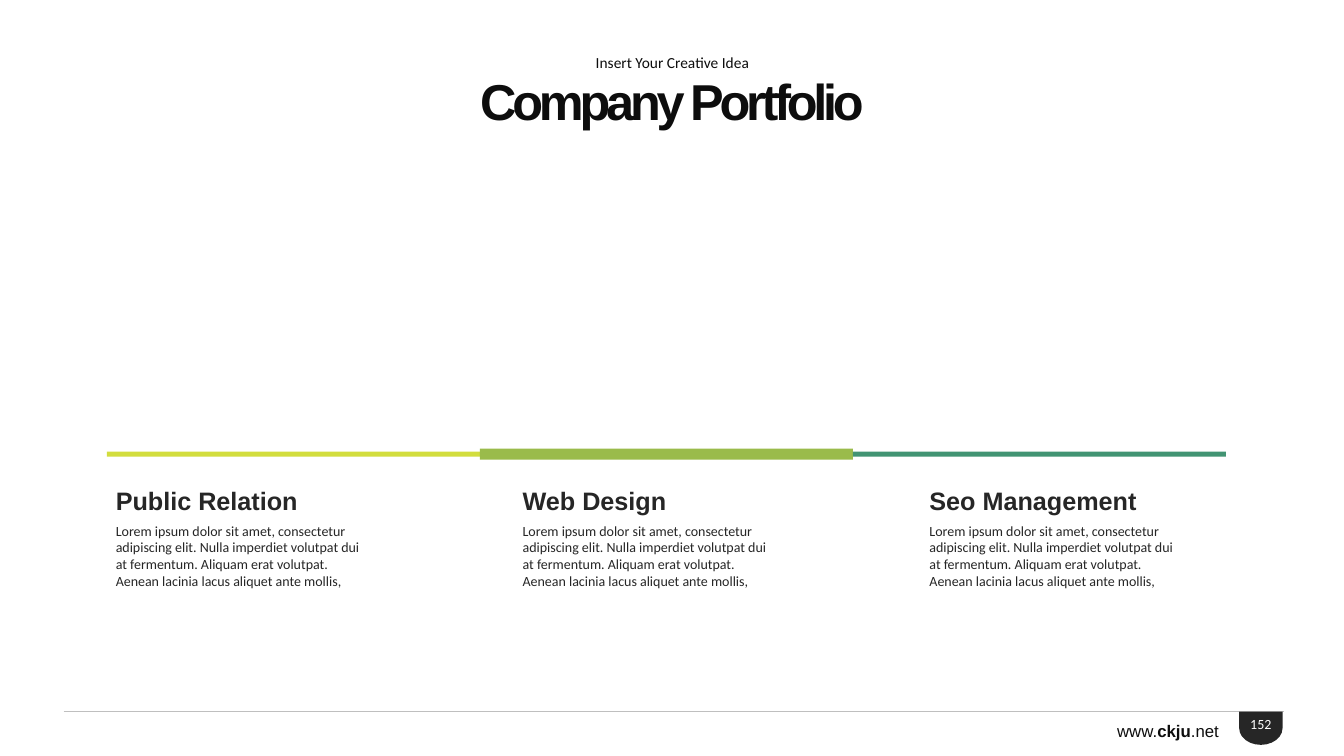
from lxml.etree import SubElement
from pptx import Presentation
from pptx.dml.color import RGBColor
from pptx.enum.shapes import MSO_CONNECTOR, MSO_SHAPE
from pptx.enum.text import MSO_ANCHOR, PP_ALIGN
from pptx.oxml.ns import qn
from pptx.util import Inches, Pt

COLORS = {
    "ink": "0D0D0D", "dark": "262626", "rule": "BFBFBF", "white": "FFFFFF",
    "lime": "D2DD3E", "green": "9ABB4B", "teal": "429473",
}
TITLE = "Company Portfolio"
SUBTITLE = "Insert Your Creative Idea"
BLURB = ("Lorem ipsum dolor sit amet, consectetur adipiscing elit. Nulla imperdiet "
         "volutpat dui at fermentum. Aliquam erat volutpat. Aenean lacinia lacus "
         "aliquet ante mollis,")
# heading, bar colour, bar thickness
SERVICES = [
    ("Public Relation", "lime", 0.05),
    ("Web Design", "green", 0.11),
    ("Seo Management", "teal", 0.05),
]
WEBSITE = [("www.", False), ("ckju", True), (".net", False)]
PAGE_NUMBER = "152"

TEXT_LEFT, TEXT_STEP = 1.05, 4.035
BAR_LEFT, BAR_WIDTH, BAR_MIDDLE = 1.06, 3.7, 4.505


def rgb(color):
    return RGBColor.from_string(COLORS[color])


def format_text(shape, size, font, color, bold=False, align=PP_ALIGN.LEFT,
                anchor=MSO_ANCHOR.MIDDLE, spacing=0.9):
    frame = shape.text_frame
    frame.word_wrap = True
    frame.vertical_anchor = anchor
    paragraph = frame.paragraphs[0]
    paragraph.alignment = align
    paragraph.line_spacing = spacing
    paragraph.font.size = Pt(size)
    paragraph.font.name = font
    paragraph.font.bold = bold
    paragraph.font.color.rgb = rgb(color)


def add_text(slide, box, text, *style, **options):
    textbox = slide.shapes.add_textbox(*map(Inches, box))
    textbox.text_frame.text = text
    format_text(textbox, *style, **options)
    return textbox


def add_filled(slide, preset, box, color):
    shape = slide.shapes.add_shape(preset, *map(Inches, box))
    shape.shadow.inherit = False
    shape.fill.solid()
    shape.fill.fore_color.rgb = rgb(color)
    shape.line.fill.background()
    return shape


def add_header(slide):
    title = slide.shapes.title
    title.left, title.top, title.width, title.height = map(
        Inches, (1.48, 0.73, 10.37, 0.61))
    title.text_frame.text = TITLE
    format_text(title, 36, "Arial", "ink", bold=True, align=PP_ALIGN.CENTER)
    # Letter spacing in hundredths of a point
    title.text_frame.paragraphs[0].runs[0].font._element.set("spc", "-300")
    add_text(slide, (4.79, 0.52, 3.76, 0.21), SUBTITLE, 11, "Calibri", "ink",
             align=PP_ALIGN.CENTER)


def add_services(slide):
    for column, (heading, color, thickness) in enumerate(SERVICES):
        left = TEXT_LEFT + column * TEXT_STEP
        add_text(slide, (left, 4.82, 3.16, 0.33), heading, 18, "Arial", "dark",
                 bold=True)
        add_text(slide, (left, 5.13, 2.71, 0.77), BLURB, 10, "Calibri", "dark",
                 anchor=MSO_ANCHOR.TOP, spacing=1.0)
        add_filled(slide, MSO_SHAPE.RECTANGLE,
                   (BAR_LEFT + column * BAR_WIDTH, BAR_MIDDLE - thickness / 2,
                    BAR_WIDTH, thickness), color)


def add_footer(slide):
    website = add_text(slide, (10.95, 7.07, 1.27, 0.38), "", 12, "Arial", "ink",
                       align=PP_ALIGN.CENTER)
    website.text_frame.word_wrap = False
    for part, bold in WEBSITE:
        run = website.text_frame.paragraphs[0].add_run()
        run.text = part
        run.font.bold = bold

    rule = slide.shapes.add_connector(
        MSO_CONNECTOR.STRAIGHT, *map(Inches, (0.63, 7.06, 12.73, 7.06)))
    rule.line.color.rgb = rgb("rule")
    rule.line.width = Pt(0.75)
    SubElement(rule._element.spPr, qn("a:effectLst"))

    badge = add_filled(slide, MSO_SHAPE.FLOWCHART_DELAY,
                       (12.34, 7.01, 0.33, 0.43), "dark")
    badge.rotation = 90
    number = add_text(slide, (12.29, 7.08, 0.43, 0.21), PAGE_NUMBER, 10, "Calibri",
                      "white", align=PP_ALIGN.CENTER, spacing=1.0)
    frame = number.text_frame
    frame.margin_left = frame.margin_right = frame.margin_top = frame.margin_bottom = 0


def main():
    deck = Presentation()
    deck.slide_width, deck.slide_height = Inches(13.33), Inches(7.5)
    slide = deck.slides.add_slide(deck.slide_layouts[5])
    add_header(slide)
    add_services(slide)
    add_footer(slide)
    deck.save("out.pptx")


if __name__ == "__main__":
    main()
